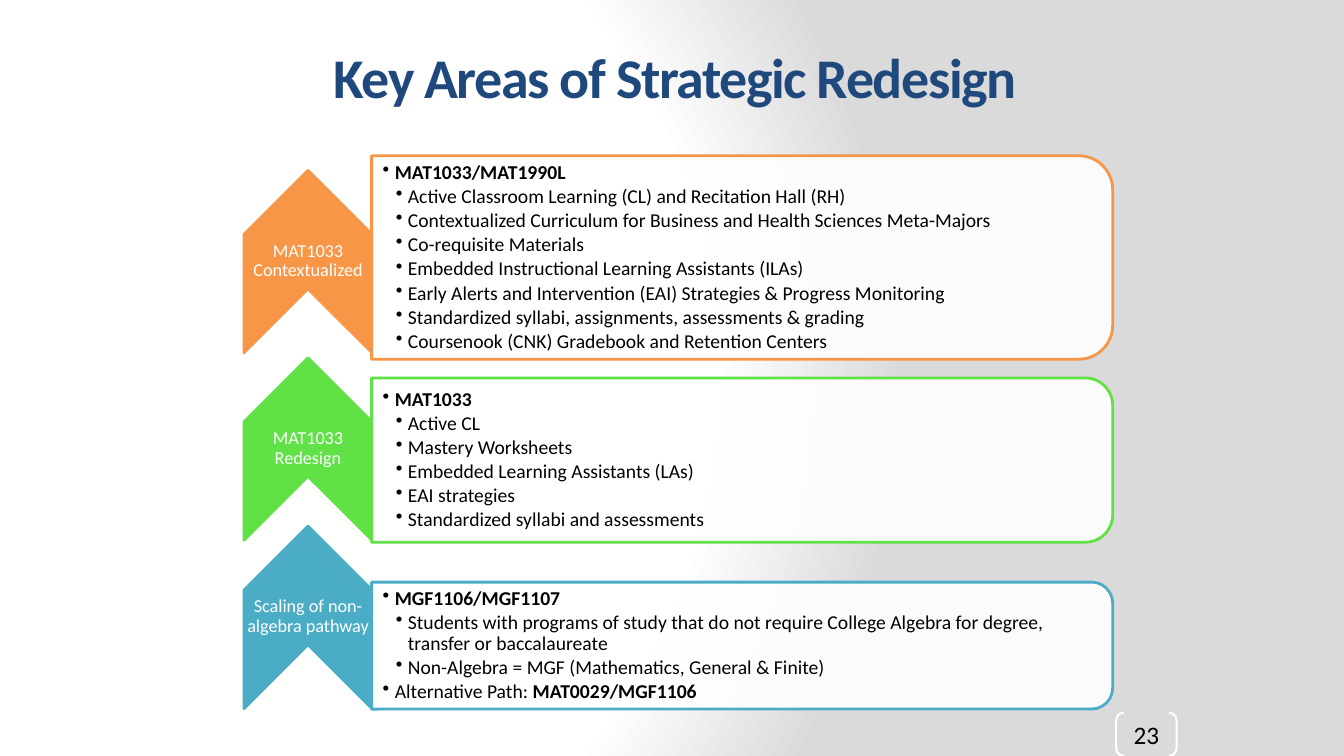
from dataclasses import dataclass

from lxml import etree
from pptx import Presentation
from pptx import util as u
from pptx.dml.color import RGBColor
from pptx.enum import shapes, text
from pptx.oxml import ns, parse_xml

SLIDE_W, SLIDE_H = u.Inches(13.33), u.Inches(7.5)
FONT = "Calibri"
COLORS = {
    "title": "1F497D",
    "orange": "F79646",
    "green": "60E146",
    "teal": "4BACC6",
    "white": "FFFFFF",
    "grey": "DADADA",
    "black": "000000",
}


@dataclass(frozen=True)
class Box:
    """Left, top, width and height in percent of the slide's size."""

    left: float
    top: float
    width: float
    height: float

    def emu(self) -> tuple[int, int, int, int]:
        """Return the box in slide units."""
        return (int(SLIDE_W * self.left / 100), int(SLIDE_H * self.top / 100),
                int(SLIDE_W * self.width / 100), int(SLIDE_H * self.height / 100))


@dataclass(frozen=True)
class Point:
    """One bullet: plain text, then bold text, at an outline level."""

    plain: str = ""
    bold: str = ""
    level: int = 1


@dataclass(frozen=True)
class Area:
    """One redesign area: an arrow with its label and a panel of points."""

    label: str
    color: str
    arrow_top: float
    panel_top: float
    panel_height: float
    points: tuple[Point, ...]


AREAS = (
    Area("MAT1033 Contextualized", "orange", 22.53, 20.6, 26.93, (
        Point(bold="MAT1033/MAT1990L", level=0),
        Point("Active Classroom Learning (CL) and Recitation Hall (RH)"),
        Point("Contextualized Curriculum for Business and Health Sciences Meta-Majors"),
        Point("Co-requisite Materials"),
        Point("Embedded Instructional Learning Assistants (ILAs)"),
        Point("Early Alerts and Intervention (EAI) Strategies & Progress Monitoring"),
        Point("Standardized syllabi, assignments, assessments & grading"),
        Point("Coursenook (CNK) Gradebook and Retention Centers"),
    )),
    Area("MAT1033 Redesign", "green", 47.33, 50, 21.73, (
        Point(bold="MAT1033", level=0),
        Point("Active CL"),
        Point("Mastery Worksheets"),
        Point("Embedded Learning Assistants (LAs)"),
        Point("EAI strategies"),
        Point("Standardized syllabi and assessments"),
    )),
    Area("Scaling of non-algebra pathway", "teal", 69.6, 77, 16.8, (
        Point(bold="MGF1106/MGF1107", level=0),
        Point("Students with programs of study that do not require College Algebra "
              "for degree, transfer or baccalaureate"),
        Point("Non-Algebra = MGF (Mathematics, General & Finite)"),
        Point("Alternative Path: ", "MAT0029/MGF1106", 0),
    )),
)


def rgb(name: str) -> RGBColor:
    """Look up a palette colour."""
    return RGBColor.from_string(COLORS[name])


def set_font(paragraph, size: float, color: str) -> None:
    """Set the face, size and colour of a paragraph."""
    paragraph.font.name = FONT
    paragraph.font.size = u.Pt(size)
    paragraph.font.color.rgb = rgb(color)


def prepare_frame(frame, left: float, other: float) -> None:
    """Wrap and centre a frame vertically, with insets in inches."""
    frame.word_wrap = True
    frame.vertical_anchor = text.MSO_ANCHOR.MIDDLE
    frame.margin_left = u.Inches(left)
    frame.margin_top = frame.margin_right = frame.margin_bottom = u.Inches(other)


def add_turned(slide, kind, box: Box, degrees: int, fill: str, line: str):
    """Add a quarter-turned shape that covers the given box."""
    left, top, width, height = box.emu()
    shift = (width - height) // 2
    shape = slide.shapes.add_shape(kind, left + shift, top - shift, height, width)
    shape.rotation = degrees
    shape.shadow.inherit = False
    shape.fill.solid()
    shape.fill.fore_color.rgb = rgb(fill)
    shape.line.color.rgb = rgb(line)
    shape.line.width = u.Pt(2)
    return shape


def add_point(paragraph, point: Point) -> None:
    """Write one bulleted point."""
    props = paragraph._p.get_or_add_pPr()
    props.set("marL", str(u.Inches((0.12, 0.25)[point.level])))
    props.set("indent", str(u.Inches(-0.12)))
    etree.SubElement(props, ns.qn("a:buChar"), char="•")
    paragraph.level = point.level
    paragraph.line_spacing = 0.9
    paragraph.space_after = u.Pt(2.1)
    set_font(paragraph, 14, "black")
    for words, bold in ((point.plain, False), (point.bold, True)):
        if words:
            run = paragraph.add_run()
            run.text = words
            run.font.bold = bold


def add_area(slide, area: Area) -> None:
    """Draw the arrow, label, panel and points of an area."""
    arrow = Box(18.15, area.arrow_top, 9.53, 24.13)
    add_turned(slide, shapes.MSO_SHAPE.CHEVRON, arrow, 270, area.color, area.color)

    label_box = Box(arrow.left, arrow.top + 8.4, arrow.width, 7.2)
    label = slide.shapes.add_textbox(*label_box.emu()).text_frame
    prepare_frame(label, 0.01, 0.01)
    caption = label.paragraphs[0]
    caption.text = area.label
    caption.alignment = text.PP_ALIGN.CENTER
    caption.line_spacing = 0.9
    set_font(caption, 13, "white")

    panel_box = Box(27.65, area.panel_top, 55.14, area.panel_height)
    panel = add_turned(slide, shapes.MSO_SHAPE.ROUND_2_SAME_RECTANGLE,
                       panel_box, 90, "white", area.color)
    white = panel._element.spPr.find(ns.qn("a:solidFill"))[0]
    etree.SubElement(white, ns.qn("a:alpha"), val="90000")

    points_box = Box(27.65, area.panel_top + 0.05 * area.panel_height,
                     54.5, 0.9 * area.panel_height)
    points = slide.shapes.add_textbox(*points_box.emu()).text_frame
    prepare_frame(points, 0.11, 0.01)
    for index, point in enumerate(area.points):
        add_point(points.add_paragraph() if index else points.paragraphs[0], point)


def add_background(slide) -> None:
    """Fill the background with a radial fade from white to grey."""
    slide.background.fill.solid()
    plain = next(slide._element.iter(ns.qn("a:solidFill")))
    stops = "".join(
        f'<a:gs pos="{pos}000"><a:srgbClr val="{COLORS[color]}"/></a:gs>'
        for pos, color in ((0, "white"), (75, "white"), (100, "grey")))
    fade = parse_xml(
        f'<a:gradFill {ns.nsdecls("a")} rotWithShape="1"><a:gsLst>{stops}</a:gsLst>'
        '<a:path path="circle"><a:fillToRect l="20000" t="50000" r="100000" b="50000"/>'
        '</a:path></a:gradFill>')
    plain.getparent().replace(plain, fade)


def add_title(slide) -> None:
    """Write the slide's heading."""
    frame = slide.shapes.add_textbox(*Box(24.08, 3.73, 52.81, 12.67).emu()).text_frame
    prepare_frame(frame, 0.1, 0.05)
    heading = frame.paragraphs[0]
    heading.text = "Key Areas of Strategic Redesign"
    set_font(heading, 40, "title")
    heading.font.bold = True
    heading.runs[0]._r.get_or_add_rPr().set("spc", "-100")


def add_page_number(slide) -> None:
    """Write the page number between brackets."""
    brackets = slide.shapes.add_shape(shapes.MSO_SHAPE.DOUBLE_BRACKET,
                                      *Box(83.05, 94.27, 4.5, 5.73).emu())
    brackets.adjustments[0] = 0.18
    brackets.shadow.inherit = False
    brackets.fill.background()
    brackets.line.color.rgb = rgb("white")
    brackets.line.width = u.Pt(1.5)
    prepare_frame(brackets.text_frame, 0, 0)
    number = brackets.text_frame.paragraphs[0]
    number.text = "23"
    number.alignment = text.PP_ALIGN.CENTER
    set_font(number, 18, "black")


def main() -> None:
    """Build and save the slide."""
    deck = Presentation()
    deck.slide_width, deck.slide_height = SLIDE_W, SLIDE_H
    slide = deck.slides.add_slide(deck.slide_layouts[6])
    add_background(slide)
    add_title(slide)
    for area in AREAS:
        add_area(slide, area)
    add_page_number(slide)
    deck.save("out.pptx")


if __name__ == "__main__":
    main()
